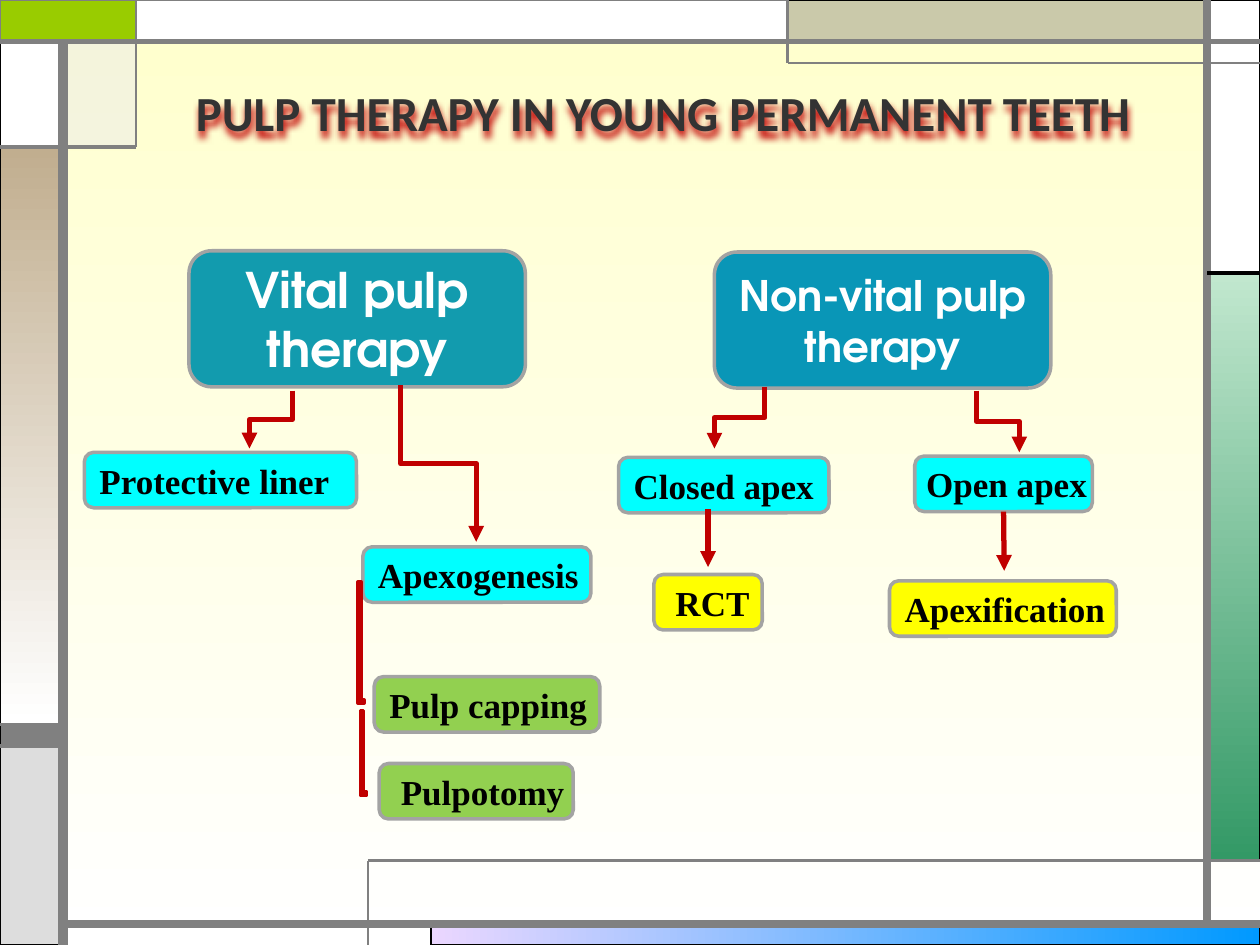
import pptx
import pptx.util
import pptx.dml.color
import pptx.enum.shapes
import pptx.enum.text
import pptx.oxml
import pptx.oxml.ns
from pptx.util import Inches

SHAPES = pptx.enum.shapes.MSO_SHAPE
CONNECTORS = pptx.enum.shapes.MSO_CONNECTOR
ALIGN = pptx.enum.text.PP_ALIGN
ANCHOR = pptx.enum.text.MSO_ANCHOR
QN = pptx.oxml.ns.qn
NAMESPACE = pptx.oxml.ns.nsdecls("a")

COLORS = {
    "cream": "FFFFCC", "white": "FFFFFF", "black": "000000", "title": "333333",
    "gray": "808080", "light_gray": "DDDDDD", "pale": "EAEAEA", "khaki": "CAC9AA",
    "lime": "99CC00", "tan": "C1AE8F", "lilac": "EBD7FF", "blue": "0099FF",
    "mint": "C1E7CE", "green": "339966", "border": "A3A3A3", "red": "C00000",
    "vital": "129BAE", "non_vital": "0996B7",
    "cyan": "00FFFF", "yellow": "FFFF00", "leaf": "92D050",
}


def rgb(name):
    return pptx.dml.color.RGBColor.from_string(COLORS[name])


def set_gradient(fill, first, last, angle):
    fill.gradient()
    fill.gradient_angle = angle
    for stop, name, position in zip(fill.gradient_stops, (first, last), (0, 1)):
        stop.color.rgb = rgb(name)
        stop.position = position


def set_line(line, color, width):
    line.color.rgb = rgb(color)
    line.width = pptx.util.Pt(width)


def add_box(slide, kind, box, fill, line_color, line_width):
    """Fill is a colour name, a (first, last, angle) gradient, or None."""
    shape = slide.shapes.add_shape(kind, *map(Inches, box))
    shape.shadow.inherit = False
    if fill is None:
        shape.fill.background()
    elif isinstance(fill, tuple):
        set_gradient(shape.fill, *fill)
    else:
        shape.fill.solid()
        shape.fill.fore_color.rgb = rgb(fill)
    set_line(shape.line, line_color, line_width)
    return shape


def write(shape, text, font, size, color, align=ALIGN.CENTER):
    frame = shape.text_frame
    frame.word_wrap = True
    frame.vertical_anchor = ANCHOR.MIDDLE
    paragraph = frame.paragraphs[0]
    paragraph.text = text
    paragraph.alignment = align
    paragraph.font.name = font
    paragraph.font.size = pptx.util.Pt(size)
    paragraph.font.bold = True
    paragraph.font.color.rgb = rgb(color)


def add_line(slide, kind, points, color, width, arrow=False):
    connector = slide.shapes.add_connector(kind, *map(Inches, points))
    set_line(connector.line, color, width)
    properties = connector._element.spPr
    properties.append(pptx.oxml.parse_xml(f"<a:effectLst {NAMESPACE}/>"))
    if arrow:
        properties.find(QN("a:ln")).append(
            pptx.oxml.parse_xml(f'<a:tailEnd {NAMESPACE} type="triangle"/>'))
    return connector


def add_elbow_arrow(slide, start_x, start_y, end_x, end_y):
    """Go down, across and down again: a sideways elbow turned a quarter."""
    length, rise = end_y - start_y, abs(end_x - start_x)
    left = (start_x + end_x - length) / 2
    top = (start_y + end_y - rise) / 2
    rightward = end_x > start_x
    ends = (left + length, left) if rightward else (left, left + length)
    points = (ends[0], top, ends[1], top + rise)
    connector = add_line(slide, CONNECTORS.ELBOW, points, "red", 3, arrow=True)
    turn = 270 if rightward else 90
    connector._element.spPr.find(QN("a:xfrm")).set("rot", str(turn * 60000))


def add_bracket(slide, left, top, height):
    """Draw a thin L, a preset set by its XML name."""
    box = (left, top, 0.05, height)
    bracket = add_box(slide, SHAPES.RECTANGLE, box, None, "red", 2)
    bracket._element.spPr.find(QN("a:prstGeom")).set("prst", "corner")


def add_frame(slide, width, height):
    """Draw the panels and bars around the slide's edges."""
    left, corner, right = 0.5, 1.08, width - 0.42
    top, bottom = 0.33, height - 0.17
    tab, low = 6.25, 6.83
    panels = [
        ((3.42, bottom, width - 3.42, 0.17), ("lilac", "blue", 0), "black", 0.75),
        ((right, 2.17, 0.42, low - 2.17), ("mint", "green", 270), "black", 0.75),
        ((0, 5.75, left, 0.17), "gray", "black", 0.75),
        ((0, 5.92, left, 1.58), "light_gray", "black", 0.75),
        ((right, 0, 0.42, 2.17), "white", "black", 0.75),
        ((tab, 0, right - tab, top), "khaki", "black", 0.75),
        ((left, top, corner - left, 0.83), "pale", "black", 0.75),
        ((0, 1.17, left, 4.58), ("tan", "white", 270), "black", 0.75),
        ((0, top, left, 0.83), "white", "black", 0.75),
        ((0, 0, corner, top), "lime", "gray", 1.5),
        ((corner, 0, tab - corner, top), "white", "gray", 0.75),
    ]
    for box, fill, line_color, line_width in panels:
        panel = add_box(slide, SHAPES.RECTANGLE, box, fill, line_color, line_width)
        if fill == "pale":
            color = panel._element.spPr.find(QN("a:solidFill"))[0]
            color.append(pptx.oxml.parse_xml(f'<a:alpha {NAMESPACE} val="50000"/>'))
    bars = [
        ((left, height, left, top), "gray", 6),
        ((left, bottom, width, bottom), "gray", 4.5),
        ((right, bottom, right, 0), "gray", 4.5),
        ((0, top, width, top), "gray", 3),
        ((width, 0.5, tab, 0.5), "gray", 1.5),
        ((tab, 0.5, tab, 0), "gray", 1.5),
        ((right, 2.17, width, 2.17), "black", 2.25),
        ((corner, 0, corner, 1.17), "gray", 1.5),
        ((corner, 1.17, 0, 1.17), "gray", 2.25),
        ((2.92, height, 2.92, low), "gray", 1.5),
        ((2.92, low, width, low), "gray", 1.5),
        ((left, 5.75, 0, 5.75), "gray", 2.25),
        ((left, 5.92, 0, 5.92), "gray", 2.25),
    ]
    for points, color, line_width in bars:
        add_line(slide, CONNECTORS.STRAIGHT, points, color, line_width)


def add_title(slide, left, top, width, height):
    title = slide.shapes.add_textbox(*map(Inches, (left, top, width, height)))
    write(title, "PULP THERAPY IN YOUNG PERMANENT TEETH", "Calibri", 28, "title")
    title.text_frame.margin_left = Inches(0.54)
    title._element.spPr.append(pptx.oxml.parse_xml(
        f'<a:effectLst {NAMESPACE}><a:outerShdw blurRad="50800" dist="38100" '
        f'dir="5400000"><a:srgbClr val="{COLORS["red"]}"/></a:outerShdw></a:effectLst>'))


def add_heading(slide, left, top, text, fill, size):
    box = (left, top, 2.67, 1.08)
    heading = add_box(slide, SHAPES.ROUNDED_RECTANGLE, box, fill, "border", 2)
    write(heading, text, "TeX Gyre Adventor", size, "white")


def add_label(slide, left, top, width, text, fill, indent=0.1):
    box = (left, top, width, 0.44)
    label = add_box(slide, SHAPES.ROUNDED_RECTANGLE, box, fill, "border", 2)
    write(label, text, "Times New Roman", 20, "black", ALIGN.LEFT)
    label.text_frame.margin_left = Inches(indent)
    label.text_frame.margin_right = 0
    return label


def add_vital_branch(slide, left, top):
    add_heading(slide, left, top, "Vital pulp therapy", "vital", 28)
    add_label(slide, left - 0.83, top + 1.6, 2.16, "Protective liner", "cyan")
    add_label(slide, left + 1.38, top + 2.35, 1.81, "Apexogenesis", "cyan")
    add_label(slide, left + 1.47, top + 3.38, 1.79, "Pulp capping", "leaf")
    add_label(slide, left + 1.51, top + 4.07, 1.54, "Pulpotomy", "leaf", 0.15)
    add_elbow_arrow(slide, left + 1.68, top + 1.07, left + 2.28, top + 2.31)
    add_elbow_arrow(slide, left + 0.82, top + 1.11, left + 0.48, top + 1.57)
    add_bracket(slide, left + 1.34, top + 2.63, 0.96)
    add_bracket(slide, left + 1.36, top + 3.65, 0.67)


def add_non_vital_branch(slide, left, top):
    add_heading(slide, left, top, "Non-vital pulp therapy", "non_vital", 24)
    add_label(slide, left - 0.76, top + 1.63, 1.67, "Closed apex", "cyan")
    add_label(slide, left - 0.48, top + 2.56, 0.86, "RCT", "yellow", 0.15)
    open_apex = add_label(slide, left + 1.59, top + 1.62, 1.41, "Open apex", "cyan", 0.07)
    add_label(slide, left + 1.39, top + 2.61, 1.8, "Apexification", "yellow")
    add_elbow_arrow(slide, left + 0.4, top + 1.07, left, top + 1.56)
    add_elbow_arrow(slide, left + 2.08, top + 1.1, left + 2.42, top + 1.59)
    for x, y in [(-0.05, 2.04), (2.3, 2.07)]:
        points = (left + x, top + y, left + x, top + y + 0.46)
        arrow = add_line(slide, CONNECTORS.STRAIGHT, points, "red", 3, arrow=True)
    arrow.begin_connect(open_apex, 2)


def main():
    presentation = pptx.Presentation()
    presentation.slide_width, presentation.slide_height = Inches(10), Inches(7.5)
    slide = presentation.slides.add_slide(presentation.slide_layouts[6])
    set_gradient(slide.background.fill, "cream", "white", 270)
    add_frame(slide, 10, 7.5)
    add_title(slide, 0.08, 0.17, 9.92, 1.44)
    add_vital_branch(slide, 1.5, 1.99)
    add_non_vital_branch(slide, 5.67, 2)
    presentation.save("out.pptx")


if __name__ == "__main__":
    main()
